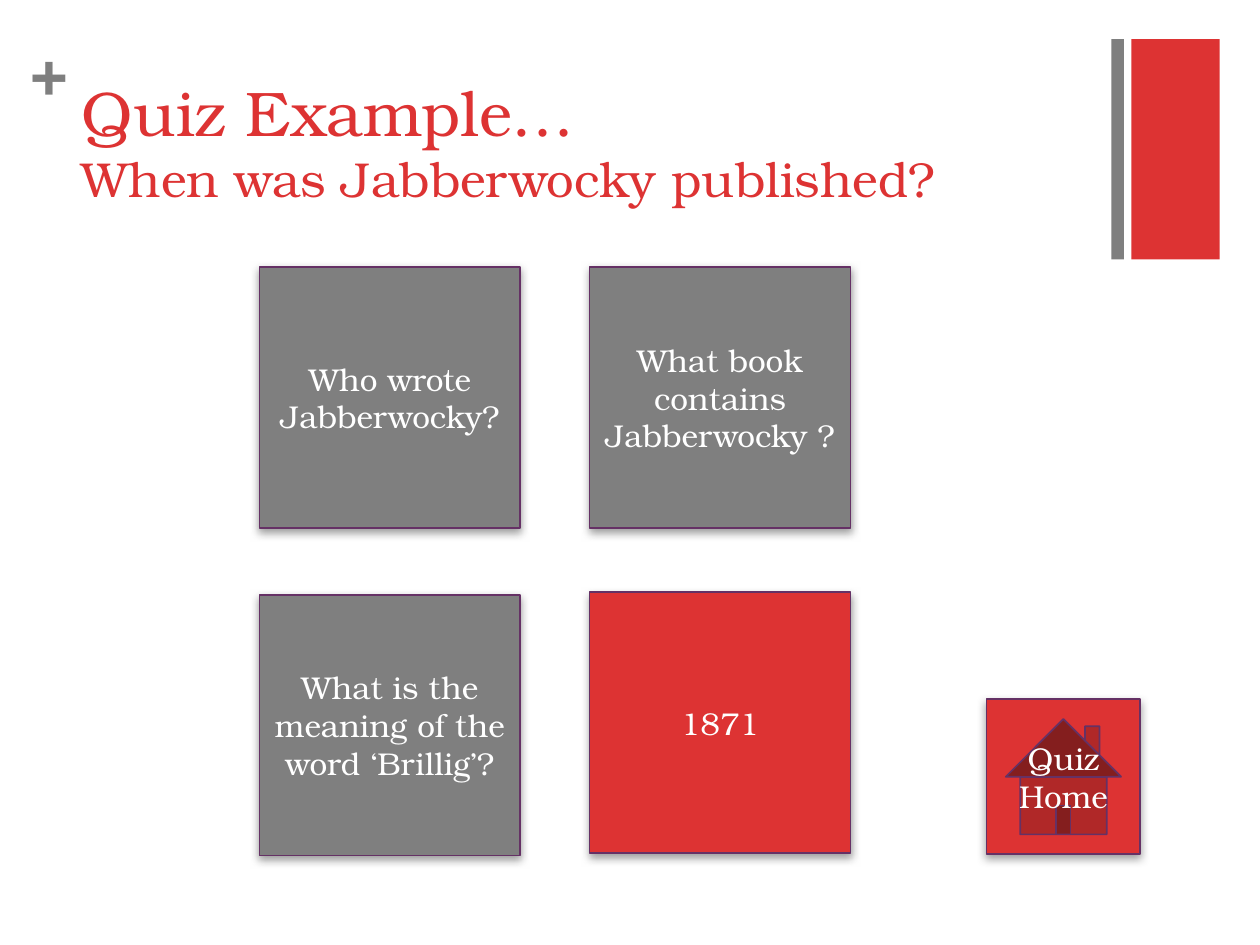
import pptx
import pptx.dml.color
import pptx.enum.shapes
import pptx.enum.text
import pptx.oxml
import pptx.oxml.ns
import pptx.util
from dataclasses import dataclass

SHAPES = pptx.enum.shapes.MSO_SHAPE
ALIGN = pptx.enum.text.PP_ALIGN
ANCHOR = pptx.enum.text.MSO_ANCHOR


@dataclass(frozen=True)
class Theme:
    font: str = "TeX Gyre Bonum"
    red: str = "DD3333"
    grey: str = "7F7F7F"
    white: str = "FFFFFF"
    outline: str = "653165"
    shadow: str = "808080"
    title_size: int = 36
    subtitle_size: int = 28
    button_size: int = 18


class QuizPage:
    """Holds the theme and the current slide, on a grid of 100 columns by 75 rows."""
    columns, rows = 100, 75

    def __init__(self, deck, theme):
        self.theme = theme
        self.column = deck.slide_width / self.columns
        self.row = deck.slide_height / self.rows
        self.page = deck.slides.add_slide(deck.slide_layouts[5])

    def area(self, left, top, width, height):
        return (round(left * self.column), round(top * self.row),
                round(width * self.column), round(height * self.row))

    def color(self, value):
        return pptx.dml.color.RGBColor.from_string(value)

    def span(self, para, text, size, color, bold=False):
        span = para.add_run()
        span.text = text
        span.font.name = self.theme.font
        span.font.size = pptx.util.Pt(size)
        span.font.bold = bold
        span.font.color.rgb = self.color(color)

    def title(self, area, heading, question):
        box = self.page.shapes.title
        box.left, box.top, box.width, box.height = self.area(*area)
        frame = box.text_frame
        frame.auto_size = pptx.enum.text.MSO_AUTO_SIZE.NONE
        frame.vertical_anchor = ANCHOR.TOP
        para = frame.paragraphs[0]
        para.alignment = ALIGN.LEFT
        self.span(para, heading, self.theme.title_size, self.theme.red)
        para.add_line_break()
        self.span(para, question, self.theme.subtitle_size, self.theme.red)

    def block(self, area, fill, kind=SHAPES.RECTANGLE):
        box = self.page.shapes.add_shape(kind, *self.area(*area))
        box.shadow.inherit = False
        box.fill.solid()
        box.fill.fore_color.rgb = self.color(fill)
        box.line.fill.background()
        return box

    def plus_sign(self, area):
        box = self.page.shapes.add_textbox(*self.area(*area))
        frame = box.text_frame
        frame.word_wrap = True
        frame.margin_left = frame.margin_right = 0
        frame.margin_top = frame.margin_bottom = 0
        self.span(frame.paragraphs[0], "+", self.theme.title_size, self.theme.grey, bold=True)

    def button(self, area, lines, fill, kind=SHAPES.ACTION_BUTTON_CUSTOM):
        box = self.block(area, fill, kind)
        box.line.color.rgb = self.color(self.theme.outline)
        box.line.width = pptx.util.Pt(1)
        self.drop_shadow(box)
        frame = box.text_frame
        frame.word_wrap = True
        frame.vertical_anchor = ANCHOR.MIDDLE
        for number, line in enumerate(lines):
            para = frame.add_paragraph() if number else frame.paragraphs[0]
            para.alignment = ALIGN.CENTER
            self.span(para, line, self.theme.button_size, self.theme.white)

    def drop_shadow(self, box):
        effects = box._element.spPr.find(pptx.oxml.ns.qn("a:effectLst"))
        effects.append(pptx.oxml.parse_xml(
            f'<a:outerShdw {pptx.oxml.ns.nsdecls("a")} blurRad="{pptx.util.Pt(5)}" '
            f'dist="{pptx.util.Pt(2)}" dir="5400000" rotWithShape="0">'
            f'<a:srgbClr val="{self.theme.shadow}"><a:alpha val="75000"/></a:srgbClr>'
            '</a:outerShdw>'))


def main():
    deck = pptx.Presentation()
    deck.slide_width = pptx.util.Inches(10)
    deck.slide_height = pptx.util.Inches(7.5)
    theme = Theme()
    quiz = QuizPage(deck, theme)

    # Corner decoration
    quiz.block((89.8, 3.1, 7, 17.5), theme.red)
    quiz.block((88.2, 3.1, 1, 17.5), theme.grey)
    quiz.plus_sign((2.4, 2.5, 2.9, 6.1))

    # Title and question
    quiz.title((5.5, 5.3, 82.6, 12.2), "Quiz Example…", "When was Jabberwocky published?")

    # Two by two answer cards; the answered one sits slightly higher
    left, top, side, step = 20.6, 21.2, 20.7, 26.2
    cards = [
        ("Who wrote Jabberwocky?", theme.grey, top),
        ("What book contains Jabberwocky ?", theme.grey, top),
        ("What is the meaning of the word ‘Brillig’?", theme.grey, 47.2),
        ("1871", theme.red, 47),
    ]
    for number, (text, fill, card_top) in enumerate(cards):
        card_left = left + number % 2 * step
        quiz.button((card_left, card_top, side, side), [text], fill)

    # Home button
    quiz.button((78.3, 55.5, 12.2, 12.3), ["Quiz", "Home"], theme.red,
                SHAPES.ACTION_BUTTON_HOME)

    deck.save("out.pptx")


if __name__ == "__main__":
    main()
